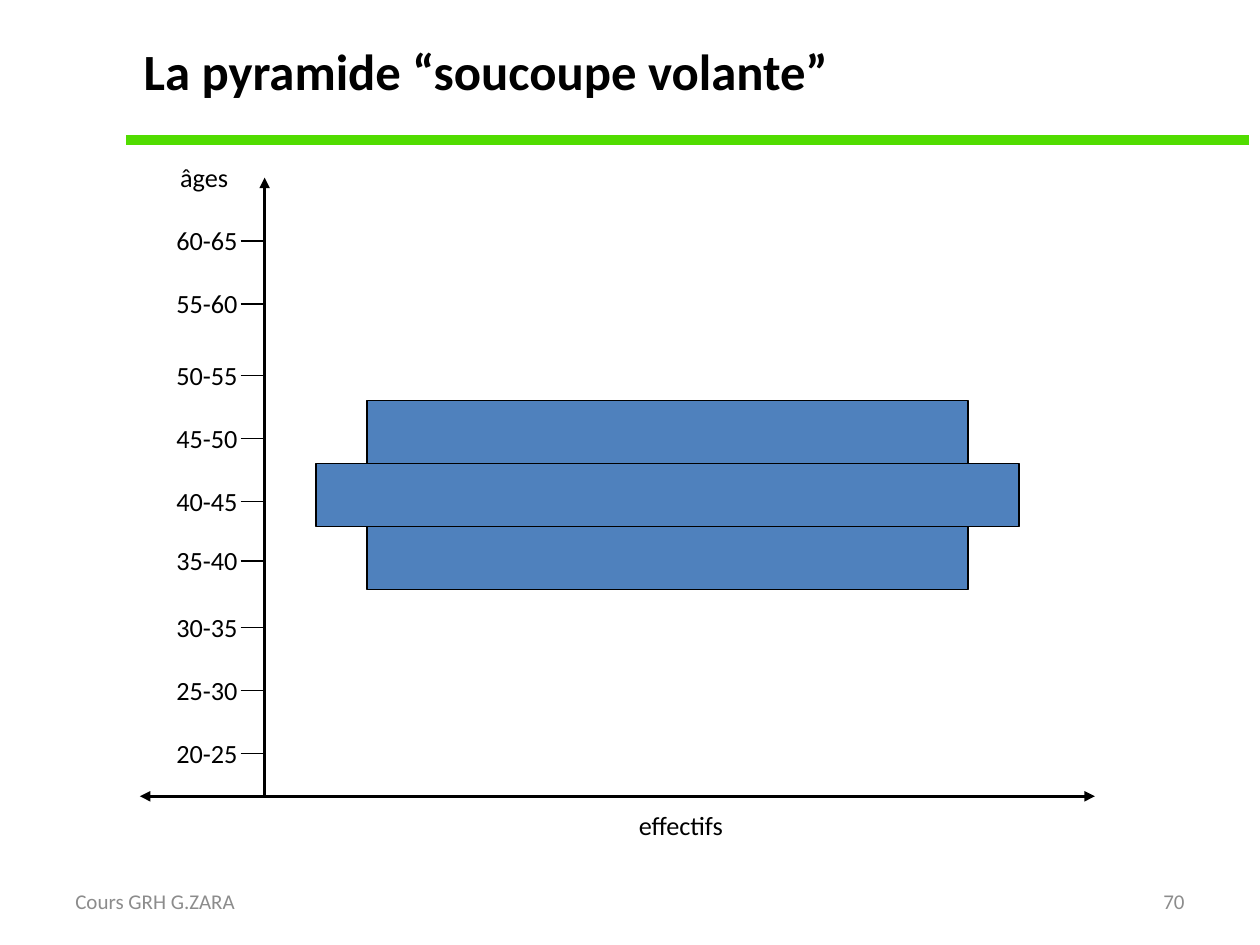
import pptx
import pptx.dml.color
import pptx.enum.shapes
import pptx.enum.text
import pptx.oxml
import pptx.oxml.ns
import pptx.util

COLORS = {"ink": "000000", "rule": "51DC00", "bar": "4F81BD", "footer": "8C8C8C"}
ALIGN = pptx.enum.text.PP_ALIGN
ANCHOR = pptx.enum.text.MSO_ANCHOR

deck = pptx.Presentation()
deck.slide_width, deck.slide_height = pptx.util.Inches(10), pptx.util.Inches(7.5)
slide = deck.slides.add_slide(deck.slide_layouts[6])
column = deck.slide_width / 10
row = deck.slide_height / 7.5


def add_label(parent, text, left, top, width, height, size, color="ink",
              bold=False, align=ALIGN.LEFT, anchor=ANCHOR.TOP, wrap=True, inset=(0.1, 0.05)):
    box = parent.add_textbox(int(left * column), int(top * row),
                             int(width * column), int(height * row))
    frame = box.text_frame
    side, edge = (pptx.util.Inches(value) for value in inset)
    frame_format = {"word_wrap": wrap, "vertical_anchor": anchor, "margin_left": side,
                    "margin_right": side, "margin_top": edge, "margin_bottom": edge}
    for key, value in frame_format.items():
        setattr(frame, key, value)
    paragraph = frame.paragraphs[0]
    paragraph.alignment = align
    run = paragraph.add_run()
    run.text = text
    for key, value in {"name": "Calibri", "size": pptx.util.Pt(size), "bold": bold}.items():
        setattr(run.font, key, value)
    run.font.color.rgb = pptx.dml.color.RGBColor.from_string(COLORS[color])


def add_line(parent, start, end, weight, color="ink", arrows=()):
    line = parent.add_connector(pptx.enum.shapes.MSO_CONNECTOR.STRAIGHT,
                                int(start[0] * column), int(start[1] * row),
                                int(end[0] * column), int(end[1] * row))
    line.line.width = pptx.util.Pt(weight)
    line.line.color.rgb = pptx.dml.color.RGBColor.from_string(COLORS[color])
    stroke = line.line._get_or_add_ln()
    for arrow in arrows:
        pptx.oxml.ns.qn(arrow)
        stroke.append(pptx.oxml.parse_xml(
            f'<{arrow} {pptx.oxml.ns.nsdecls("a")} type="triangle"/>'))
    line._element.spPr.append(pptx.oxml.parse_xml(
        f'<a:effectLst {pptx.oxml.ns.nsdecls("a")}/>'))


# Title and green rule
add_label(slide.shapes, "La pyramide “soucoupe volante”", 1.05, 0.27, 8.13, 0.6, 29,
          bold=True, inset=(0.09, 0.05))
add_line(slide.shapes, (1, 1.11), (9.91, 1.11), 6, "rule")

# Pyramid bars, centred on one axis
bar_centre, bar_top, bar_height = 5.3, 3.18, 0.5
for level, bar_width in enumerate((4.77, 5.58, 4.77)):
    bar = slide.shapes.add_shape(
        pptx.enum.shapes.MSO_SHAPE.RECTANGLE,
        int((bar_centre - bar_width / 2) * column), int((bar_top + level * bar_height) * row),
        int(bar_width * column), int(bar_height * row))
    bar.shadow.inherit = False
    bar.fill.solid()
    bar.fill.fore_color.rgb = pptx.dml.color.RGBColor.from_string(COLORS["bar"])
    bar.line.color.rgb = pptx.dml.color.RGBColor.from_string(COLORS["ink"])
    bar.line.width = pptx.util.Pt(1)

# Axes
axes = slide.shapes.add_group_shape().shapes
axis_x = 2.1
add_line(axes, (axis_x, 1.41), (axis_x, 6.31), 2, arrows=("a:headEnd",))
add_line(axes, (1.11, 6.32), (8.69, 6.32), 2, arrows=("a:headEnd", "a:tailEnd"))

# Axis names
axis_text = {"size": 15, "wrap": False, "inset": (0.02, 0.01)}
add_label(axes, "âges", 1.41, 1.27, 0.44, 0.27, **axis_text)
add_label(axes, "effectifs", 5.05, 6.41, 0.73, 0.27, **axis_text)

# Age classes from oldest to youngest, each with its tick
tick_rows = (1.91, 2.41, 2.98, 3.48, 3.98, 4.45, 4.98, 5.48, 5.98)
for youngest, tick_y in zip(range(60, 15, -5), tick_rows):
    add_label(axes, f"{youngest}-{youngest + 5}", 1.38, tick_y - 0.14, 0.54, 0.27, **axis_text)
    add_line(axes, (1.91, tick_y), (axis_x, tick_y), 1)

# Footer and slide number
for text, left, align in (("Cours GRH G.ZARA", 0.5, ALIGN.LEFT), ("70", 7.17, ALIGN.RIGHT)):
    add_label(slide.shapes, text, left, 6.95, 2.33, 0.4, 12, "footer",
              align=align, anchor=ANCHOR.MIDDLE)

deck.save("out.pptx")
